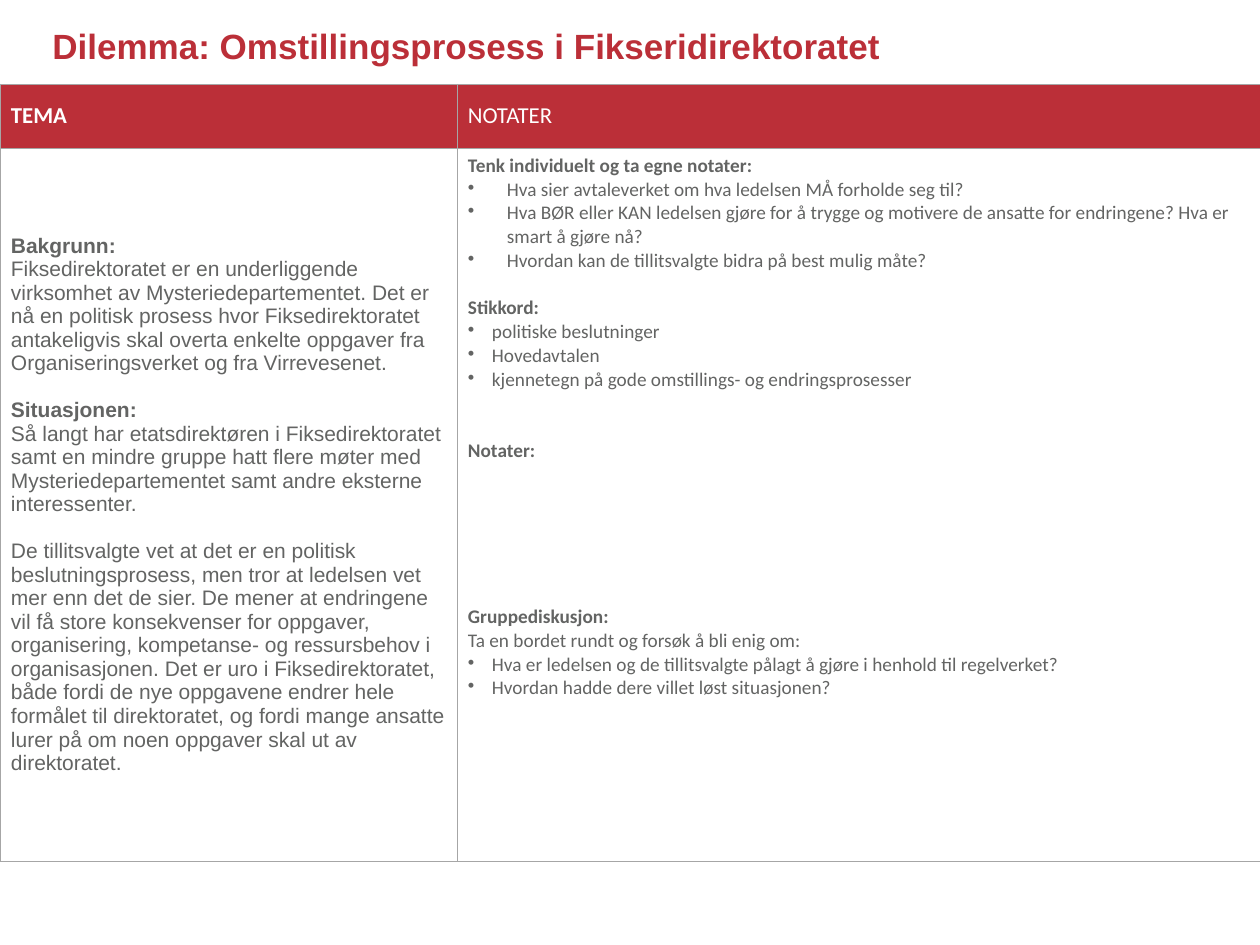
"""Build the dilemma slide with a title and a two-column table."""
from lxml import etree
from pptx import Presentation
from pptx.dml.color import RGBColor
from pptx.enum.text import MSO_ANCHOR
from pptx.oxml.ns import qn
from pptx.util import Pt

MID, TOP = MSO_ANCHOR.MIDDLE, MSO_ANCHOR.TOP
RED = RGBColor(0xBB, 0x2F, 0x38)
GRAY = RGBColor(0x63, 0x64, 0x63)
EDGE = RGBColor(0xA6, 0xA6, 0xA6)
WHITE = RGBColor(0xFF, 0xFF, 0xFF)
SCALE = 914400 // 126
WIDE, NEAR = 39, 24

THEME = [
    ("Bakgrunn:", True, 0, 0),
    ("Fiksedirektoratet er en underliggende virksomhet av Mysteriedepartementet. "
     "Det er nå en politisk prosess hvor Fiksedirektoratet antakeligvis skal overta "
     "enkelte oppgaver fra Organiseringsverket og fra Virrevesenet.", False, 0, 0),
    ("Situasjonen:", True, 0, 13.5),
    ("Så langt har etatsdirektøren i Fiksedirektoratet samt en mindre gruppe hatt "
     "flere møter med Mysteriedepartementet samt andre eksterne interessenter.",
     False, 0, 0),
    ("De tillitsvalgte vet at det er en politisk beslutningsprosess, men tror at "
     "ledelsen vet mer enn det de sier. De mener at endringene vil få store "
     "konsekvenser for oppgaver, organisering, kompetanse- og ressursbehov i "
     "organisasjonen. Det er uro i Fiksedirektoratet, både fordi de nye oppgavene "
     "endrer hele formålet til direktoratet, og fordi mange ansatte lurer på om noen "
     "oppgaver skal ut av direktoratet.", False, 0, 13.5),
]
NOTES = [
    ("Tenk individuelt og ta egne notater:", True, 0, 0),
    ("Hva sier avtaleverket om hva ledelsen MÅ forholde seg til?", False, WIDE, 0),
    ("Hva BØR eller KAN ledelsen gjøre for å trygge og motivere de ansatte for "
     "endringene? Hva er smart å gjøre nå?", False, WIDE, 0),
    ("Hvordan kan de tillitsvalgte bidra på best mulig måte?", False, WIDE, 0),
    ("Stikkord:", True, 0, 13.5),
    ("politiske beslutninger", False, NEAR, 0),
    ("Hovedavtalen", False, NEAR, 0),
    ("kjennetegn på gode omstillings- og endringsprosesser", False, NEAR, 0),
    ("Notater:", True, 0, 27),
    ("Gruppediskusjon:", True, 0, 81.5),
    ("Ta en bordet rundt og forsøk å bli enig om:", False, 0, 0),
    ("Hva er ledelsen og de tillitsvalgte pålagt å gjøre i henhold til regelverket?",
     False, NEAR, 0),
    ("Hvordan hadde dere villet løst situasjonen?", False, NEAR, 0),
]


def px(size):
    """Turn px into EMU."""
    return size * SCALE


class Deck:
    """Hold the style and the current slide."""

    def __init__(self):
        """Start a deck with one blank slide."""
        self.prs = Presentation()
        self.prs.slide_width, self.prs.slide_height = px(1260), px(945)
        self.slide = self.prs.slides.add_slide(self.prs.slide_layouts[6])

    def text(self, frame, lines, face, size, color):
        """Fill a text frame with (words, bold, indent, gap) lines."""
        for i, (words, bold, dent, gap) in enumerate(lines):
            para = frame.add_paragraph() if i else frame.paragraphs[0]
            para.text = words
            if gap:
                para.space_before = Pt(gap)
            if dent:
                props = para._p.get_or_add_pPr()
                props.set("marL", str(px(dent)))
                props.set("indent", str(-px(dent)))
                etree.SubElement(props, qn("a:buChar"), char="•")
            font = para.font
            font.name, font.size, font.bold = face, Pt(size), bold
            font.color.rgb = color

    def title(self, words, left, top, width, height):
        """Add the heading."""
        box = self.slide.shapes.add_textbox(px(left), px(top), px(width), px(height))
        frame = box.text_frame
        frame.word_wrap, frame.vertical_anchor = True, TOP
        frame.margin_top = 0
        self.text(frame, [(words, True, 0, 0)], "Arial", 20, RED)

    def table(self, left, top, cols, rows):
        """Add an empty table and return it."""
        table = self.slide.shapes.add_table(
            len(rows), len(cols), px(left), px(top), px(sum(cols)), px(sum(rows))).table
        table.horz_banding = False
        for col, width in zip(table.columns, cols):
            col.width = px(width)
        for row, height in zip(table.rows, rows):
            row.height = px(height)
        return table

    def cell(self, cell, lines, face, size, color, fill, anchor=MID):
        """Style and fill one table cell."""
        cell.fill.solid()
        cell.fill.fore_color.rgb = fill
        cell.vertical_anchor = anchor
        cell.margin_left = cell.margin_right = px(11)
        cell.margin_top = cell.margin_bottom = px(6)
        props = cell._tc.get_or_add_tcPr()
        for i, side in enumerate("LRTB"):
            line = etree.Element(qn(f"a:ln{side}"), w=str(Pt(0.25)))
            paint = etree.SubElement(line, qn("a:solidFill"))
            etree.SubElement(paint, qn("a:srgbClr"), val=str(EDGE))
            props.insert(i, line)
        self.text(cell.text_frame, lines, face, size, color)


def main():
    """Build and save the slide."""
    deck = Deck()
    deck.title("Dilemma: Omstillingsprosess i Fikseridirektoratet", 40, 25, 1134, 77)
    table = deck.table(0, 84, (457, 803), (64, 713))
    for i, (words, bold) in enumerate((("TEMA", True), ("NOTATER", False))):
        deck.cell(table.cell(0, i), [(words, bold, 0, 0)], "Calibri", 13, WHITE, RED)
    deck.cell(table.cell(1, 0), THEME, "Arial", 12, GRAY, WHITE)
    deck.cell(table.cell(1, 1), NOTES, "Calibri", 11, GRAY, WHITE, TOP)
    deck.prs.save("out.pptx")


if __name__ == "__main__":
    main()
